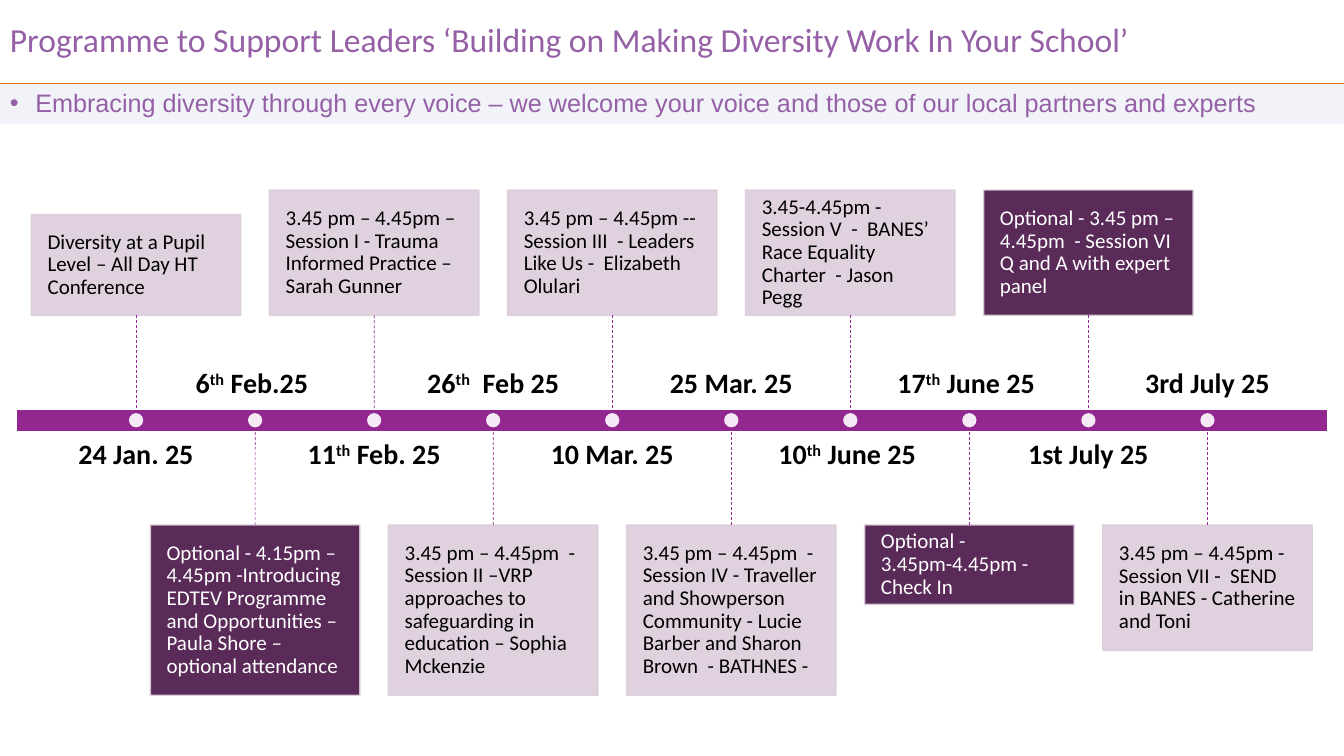
from lxml.etree import SubElement
from pptx import Presentation
from pptx.dml.color import RGBColor
from pptx.enum.dml import MSO_LINE
from pptx.enum.shapes import MSO_CONNECTOR, MSO_SHAPE
from pptx.enum.text import MSO_ANCHOR, PP_ALIGN
from pptx.oxml.ns import qn
from pptx.util import Cm, Pt

WHITE = RGBColor(0xFF, 0xFF, 0xFF)
BLACK = RGBColor(0x00, 0x00, 0x00)
ORANGE = RGBColor(0xE4, 0x6C, 0x0A)
LILAC = RGBColor(0x95, 0x60, 0xA6)
MIST = RGBColor(0xBB, 0xC4, 0xDE)
PURPLE = RGBColor(0x92, 0x27, 0x8F)
PALE = RGBColor(0xDC, 0xCD, 0xDB)
DARK = RGBColor(0x49, 0x14, 0x47)

WIDE, HIGH = 33.87, 19.05
RULE_TOP = 2.11
START, STEP = 3.43, 3
BAR_TOP, BAR_HIGH = 10.31, 0.56
BAR_END = BAR_TOP + BAR_HIGH
CARD_WIDE, UPPER_END, LOWER_TOP = 5.28, 7.95, 13.23
DATE_WIDE, DATE_HIGH, DATE_GAP = 4.8, 1.57, 0.23
DOT = 0.36

EVENTS = [
    ("24 Jan. 25", "Diversity at a Pupil Level – All Day HT Conference", 2.54, PALE),
    ("6^th^ Feb.25 ", "Optional - 4.15pm – 4.45pm -Introducing EDTEV Programme and "
     "Opportunities – Paula Shore – optional attendance", 4.29, DARK),
    ("11^th^ Feb. 25", "3.45 pm – 4.45pm – Session I - Trauma Informed Practice – "
     "Sarah Gunner", 3.16, PALE),
    ("26^th^  Feb 25", "3.45 pm – 4.45pm  - Session II –VRP approaches to  safeguarding "
     "in education – Sophia Mckenzie", 4.29, PALE),
    ("10 Mar. 25", "3.45 pm – 4.45pm -- Session III  - Leaders Like Us -  Elizabeth "
     "Olulari", 3.16, PALE),
    ("25 Mar. 25", "3.45 pm – 4.45pm  - Session IV - Traveller and Showperson Community "
     "- Lucie Barber and Sharon Brown  - BATHNES -", 4.29, PALE),
    ("10^th^ June 25 ", "3.45-4.45pm - Session V  -  BANES’ Race Equality Charter  - "
     "Jason Pegg", 3.16, PALE),
    ("17^th^ June 25 ", "Optional - 3.45pm-4.45pm - Check In", 2, DARK),
    ("1st July 25", "Optional - 3.45 pm – 4.45pm  - Session VI Q and A with expert panel",
     3.16, DARK),
    ("3rd July 25", "3.45 pm – 4.45pm - Session VII -  SEND in BANES - Catherine and Toni",
     3.16, PALE),
]


def assign(target, values):
    for name, value in values.items():
        setattr(target, name, value)


def fade(part, alpha):
    for tint in part.iter(qn("a:srgbClr")):
        SubElement(tint, qn("a:alpha")).set("val", str(alpha * 1000))


class Board:
    title = {"name": "Calibri", "size": Pt(24)}
    lead = {"name": "Arial", "size": Pt(18)}
    date = {"name": "Calibri", "size": Pt(20), "bold": True}
    note = {"name": "Calibri", "size": Pt(15)}

    def __init__(self, slide):
        self.shapes = slide.shapes

    def block(self, kind, box, fill, alpha=100, edge=None):
        shape = self.shapes.add_shape(kind, *map(Cm, box))
        shape.shadow.inherit = False
        shape.fill.solid()
        shape.fill.fore_color.rgb = fill
        if edge is None:
            shape.line.fill.background()
        else:
            shape.line.color.rgb = edge
            shape.line.width = Pt(1)
        if alpha < 100:
            fade(shape._element.spPr, alpha)
        return shape

    def label(self, box, *args, **kwargs):
        self.letter(self.shapes.add_textbox(*map(Cm, box)), *args, **kwargs)

    def letter(self, shape, text, style, color, anchor=MSO_ANCHOR.MIDDLE,
               align=PP_ALIGN.LEFT, inset=None, bullet=False):
        frame = shape.text_frame
        assign(frame, {"word_wrap": True, "vertical_anchor": anchor})
        if inset is not None:
            sides = ("left", "top", "right", "bottom")
            assign(frame, {f"margin_{side}": Cm(inset) for side in sides})
        para = frame.paragraphs[0]
        assign(para, {"alignment": align, "line_spacing": 0.9})
        if bullet:
            props = para._p.get_or_add_pPr()
            props.set("marL", str(Cm(0.64)))
            props.set("indent", str(-Cm(0.64)))
            SubElement(props, qn("a:buFont")).set("typeface", "Arial")
            SubElement(props, qn("a:buChar")).set("char", "•")
        for place, piece in enumerate(text.split("^")):
            run = para.add_run()
            run.text = piece
            assign(run.font, style)
            run.font.color.rgb = color
            if place % 2:
                run._r.get_or_add_rPr().set("baseline", "30000")

    def link(self, start, end, color, dash=None):
        line = self.shapes.add_connector(MSO_CONNECTOR.STRAIGHT, *map(Cm, start + end))
        line.line.color.rgb = color
        assign(line.line, {"width": Pt(0.5), "dash_style": dash})
        SubElement(line._element.spPr, qn("a:effectLst"))
        return line

    def event(self, mid, upper, date, text, high, fill):
        if upper:
            top, edge, site, bar = UPPER_END - high, UPPER_END, 2, BAR_TOP
            day, anchor = BAR_END + DATE_GAP, MSO_ANCHOR.TOP
        else:
            top, edge, site, bar = LOWER_TOP, LOWER_TOP, 0, BAR_END
            day, anchor = BAR_TOP - DATE_GAP - DATE_HIGH, MSO_ANCHOR.BOTTOM
        self.label((mid - DATE_WIDE / 2, day, DATE_WIDE, DATE_HIGH), date, self.date,
                   BLACK, anchor, PP_ALIGN.CENTER, 0)
        card = self.block(MSO_SHAPE.RECTANGLE, (mid - CARD_WIDE / 2, top, CARD_WIDE, high),
                          fill, 90, PALE)
        self.letter(card, text, self.note, WHITE if fill == DARK else BLACK, inset=0.41)
        line = self.link((mid, edge), (mid, bar), PURPLE, MSO_LINE.DASH)
        line.begin_connect(card, site)
        self.block(MSO_SHAPE.OVAL, (mid - DOT / 2, BAR_TOP + (BAR_HIGH - DOT) / 2, DOT, DOT),
                   WHITE, 90)


def main():
    deck = Presentation()
    assign(deck, {"slide_width": Cm(WIDE), "slide_height": Cm(HIGH)})
    board = Board(deck.slides.add_slide(deck.slide_layouts[6]))
    board.link((0, RULE_TOP), (WIDE, RULE_TOP), ORANGE)
    board.label((0, 0, WIDE, RULE_TOP),
                "Programme to Support Leaders ‘Building on Making Diversity Work In Your School’",
                board.title, LILAC)
    band = board.block(MSO_SHAPE.RECTANGLE, (0, RULE_TOP, WIDE, 1.02), MIST, 20)
    board.letter(band, "Embracing diversity through every voice – we welcome your voice "
                 "and those of our local partners and experts", board.lead, LILAC, bullet=True)
    board.block(MSO_SHAPE.RECTANGLE, (0.4, BAR_TOP, 33.07, BAR_HIGH), PURPLE, edge=WHITE)
    for place, event in enumerate(EVENTS):
        board.event(START + place * STEP, place % 2 == 0, *event)
    deck.save("out.pptx")


if __name__ == "__main__":
    main()
